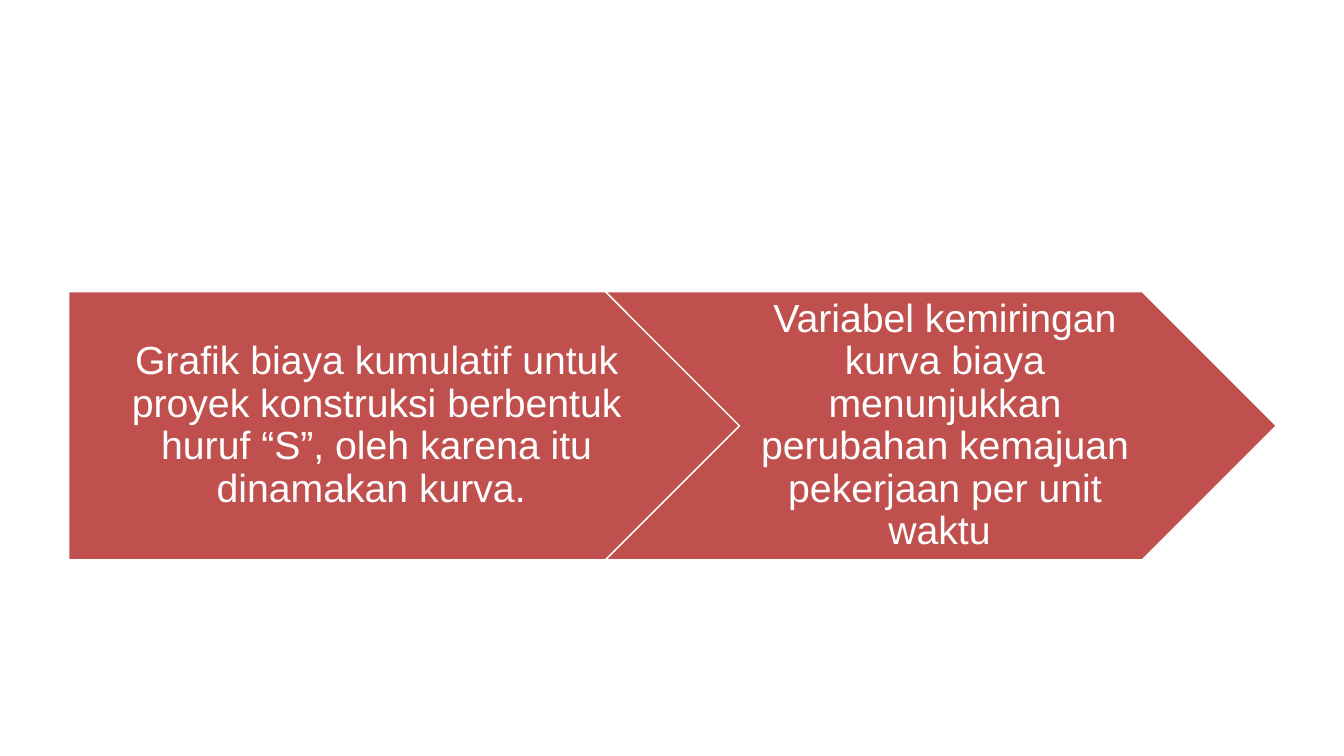
import pptx
import pptx.dml.color
import pptx.enum.shapes
import pptx.enum.text
import pptx.util

Cm = pptx.util.Cm
Pt = pptx.util.Pt
RGBColor = pptx.dml.color.RGBColor
Shape = pptx.enum.shapes.MSO_SHAPE

# Content: outline, left inset, wording
STEPS = [
    (Shape.PENTAGON, Cm(0.4),
     "Grafik biaya kumulatif untuk proyek konstruksi berbentuk huruf “S”, "
     "oleh karena itu dinamakan kurva. "),
    (Shape.CHEVRON, Cm(0.3),
     "Variabel kemiringan kurva biaya menunjukkan perubahan kemajuan "
     "pekerjaan per unit waktu "),
]

THEME = {
    "fill": RGBColor(0xC0, 0x50, 0x4D),
    "light": RGBColor(0xFF, 0xFF, 0xFF),
    "font": "Arial",
    "size": Pt(28),
    "line": Pt(1),
}

# Layout: each arrow overlaps the one before by a fifth of its width
LEFT, TOP = Cm(1.73), Cm(7.35)
WIDTH, HEIGHT = Cm(16.91), Cm(6.76)
STEP = int(WIDTH * 0.8)

FRAME_FORMAT = {
    "word_wrap": True,
    "vertical_anchor": pptx.enum.text.MSO_ANCHOR.MIDDLE,
    "margin_top": Cm(0.2),
    "margin_right": Cm(0.1),
    "margin_bottom": Cm(0.2),
}
PARAGRAPH_FORMAT = {
    "alignment": pptx.enum.text.PP_ALIGN.CENTER,
    "line_spacing": 0.9,
}
FONT_FORMAT = {"name": THEME["font"], "size": THEME["size"]}


def apply_format(target, values):
    for name, value in values.items():
        setattr(target, name, value)


def add_step(slide, index, outline, left_inset, wording):
    shape = slide.shapes.add_shape(
        outline, LEFT + index * STEP, TOP, WIDTH, HEIGHT)
    shape.shadow.inherit = False
    shape.fill.solid()
    shape.fill.fore_color.rgb = THEME["fill"]
    shape.line.color.rgb = THEME["light"]
    shape.line.width = THEME["line"]

    # Wording inside the arrow
    frame = shape.text_frame
    apply_format(frame, {**FRAME_FORMAT, "margin_left": left_inset})
    paragraph = frame.paragraphs[0]
    apply_format(paragraph, PARAGRAPH_FORMAT)
    run = paragraph.add_run()
    run.text = wording
    apply_format(run.font, FONT_FORMAT)
    run.font.color.rgb = THEME["light"]


def main():
    presentation = pptx.Presentation()
    presentation.slide_width = Cm(33.87)
    presentation.slide_height = Cm(19.05)
    slide = presentation.slides.add_slide(presentation.slide_layouts[6])
    for index, step in enumerate(STEPS):
        add_step(slide, index, *step)
    presentation.save("out.pptx")


if __name__ == "__main__":
    main()
